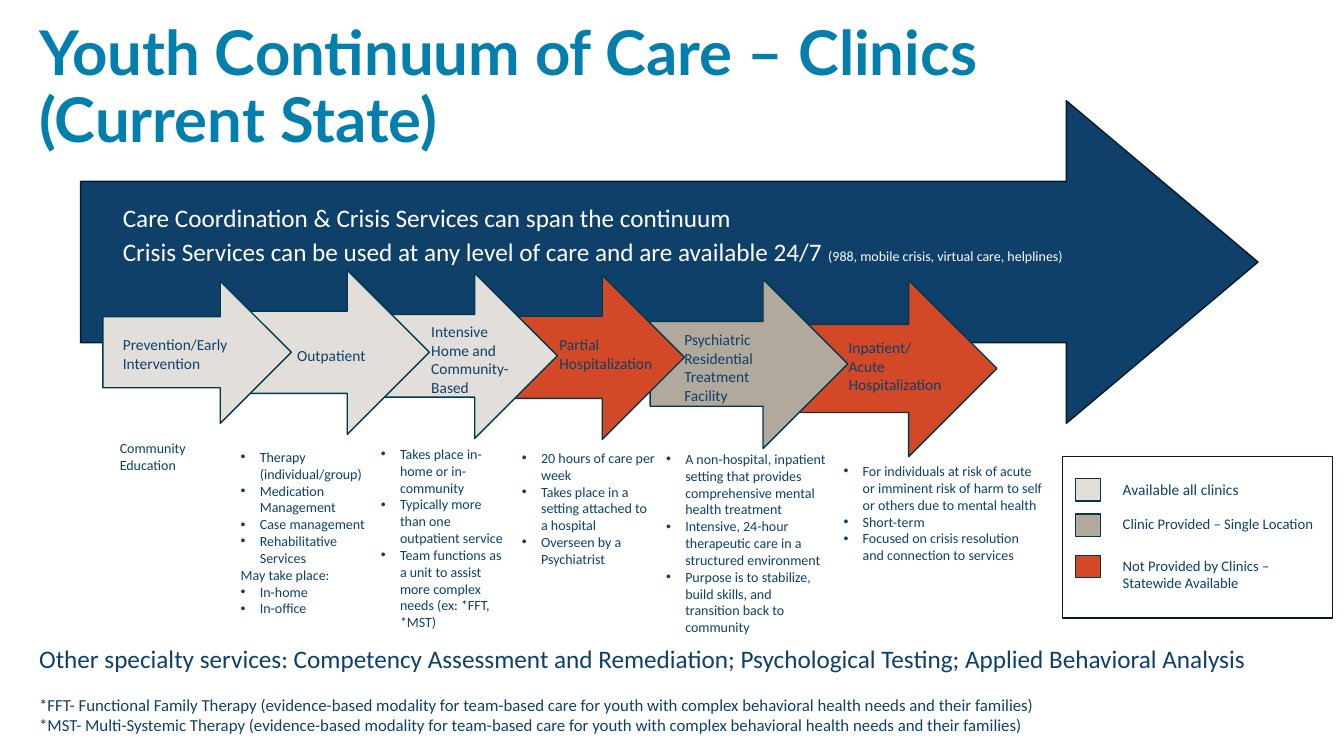
"""Build the Youth Continuum of Care slide."""
from dataclasses import dataclass

from lxml import etree
from pptx import Presentation
from pptx import util as u
from pptx.dml.color import RGBColor
from pptx.enum import shapes, text
from pptx.oxml import ns

COLS, ROWS = 133.33, 75
SLIDE_W, SLIDE_H = u.Inches(13.33), u.Inches(7.5)


@dataclass(frozen=True)
class Theme:
    head_font: str = "Lato"
    body_font: str = "Calibri"
    title: str = "037FAE"
    navy: str = "0E406A"
    white: str = "FFFFFF"
    dark_line: str = "061C2E"
    teal_line: str = "01384C"
    everywhere: str = "E2DFDA"
    single: str = "B1A99C"
    statewide: str = "D34927"
    title_pt: float = 44
    lead_pt: float = 18
    note_pt: float = 12
    label_pt: float = 11
    legend_pt: float = 10.5
    detail_pt: float = 10
    line_pt: float = 1


@dataclass(frozen=True)
class Box:
    col: float
    row: float
    cols: float
    rows: float

    def emu(self) -> tuple[int, int, int, int]:
        x, y = SLIDE_W / COLS, SLIDE_H / ROWS
        return round(self.col * x), round(self.row * y), round(self.cols * x), round(self.rows * y)


@dataclass(frozen=True)
class Run:
    words: str
    size: float
    color: str
    font: str
    bold: bool = False


@dataclass(frozen=True)
class Line:
    runs: tuple[Run, ...]
    bullet: bool = False


@dataclass(frozen=True)
class Stage:
    arrow: Box
    fill: str
    label_box: Box
    label: str
    detail_box: Box
    details: tuple[Line, ...]


@dataclass(frozen=True)
class Key:
    row: float
    fill: str
    label: str
    size: float


T = Theme()


def plain(words: str, size: float, color: str = T.navy) -> Line:
    return Line((Run(words, size, color, T.body_font),))


def detail(words: str) -> Line:
    return plain(words, T.detail_pt)


def points(*items: str) -> tuple[Line, ...]:
    return tuple(Line(detail(item).runs, True) for item in items)


STAGES = (
    Stage(Box(10.2, 27.9, 18.7, 14.1), T.everywhere,
          Box(11.2, 32.8, 14.7, 4.7), "Prevention/Early Intervention",
          Box(10.9, 43.1, 9.7, 4.4), (detail("Community Education"),)),
    Stage(Box(24.8, 26.8, 17.8, 16.3), T.everywhere,
          Box(28.5, 33.8, 10.2, 2.9), "Outpatient",
          Box(22.9, 44, 15.8, 21.2),
          points("Therapy (individual/group)", "Medication Management",
                 "Case management", "Rehabilitative Services")
          + (detail("May take place:"),) + points("In-home", "In-office")),
    Stage(Box(37.5, 27.1, 17.8, 16.4), T.everywhere,
          Box(41.8, 31.5, 10.2, 8.4), "Intensive Home and Community-Based",
          Box(36.8, 43.7, 14.8, 19.5),
          points("Takes place in-home or in-community",
                 "Typically more than one outpatient service",
                 "Team functions as a unit to assist more complex needs (ex: *FFT, *MST)")),
    Stage(Box(50.5, 27.3, 17.4, 16.3), T.statewide,
          Box(54.5, 32.8, 14.4, 4.7), "Partial Hospitalization",
          Box(50.8, 44.1, 15.3, 14.5),
          points("20 hours of care per week",
                 "Takes place in a setting attached to a hospital",
                 "Overseen by a Psychiatrist")),
    Stage(Box(64.5, 27.7, 19.6, 16.8), T.single,
          Box(66.9, 32.3, 12.5, 8.4), "Psychiatric Residential Treatment Facility",
          Box(65.1, 44.2, 18.1, 21.2),
          points("A non-hospital, inpatient setting that provides comprehensive "
                 "mental health treatment",
                 "Intensive, 24-hour therapeutic care in a structured environment",
                 "Purpose is to stabilize, build skills, and transition back to community")),
    Stage(Box(78.4, 27.8, 20.5, 17.5), T.statewide,
          Box(83.2, 33.1, 11.8, 6.6), "Inpatient/ Acute Hospitalization",
          Box(82.7, 45.4, 21.7, 12.8),
          points("For individuals at risk of acute or imminent risk of harm to self "
                 "or others due to mental health",
                 "Short-term",
                 "Focused on crisis resolution and connection to services")),
)

KEYS = (
    Key(47.5, T.everywhere, "Available all clinics", T.label_pt),
    Key(51, T.single, "Clinic Provided – Single Location", T.legend_pt),
    Key(55.1, T.statewide, "Not Provided by Clinics – Statewide Available", T.legend_pt),
)

CRISIS = Line((
    Run("Crisis Services can be used at any level of care and are available 24/7 ",
        T.lead_pt, T.white, T.body_font),
    Run("(988, mobile crisis, virtual care, helplines)", T.detail_pt, T.white, T.body_font),
))
FOOTNOTE = " (evidence-based modality for team-based care for youth with complex " \
           "behavioral health needs and their families)"
BANDS = (
    (Box(11.2, 19.6, 64.7, 4), (plain("Care Coordination & Crisis Services can span the continuum",
                                      T.lead_pt, T.white),)),
    (Box(11.2, 23, 100.7, 4), (CRISIS,)),
    (Box(2.9, 63.3, 123.7, 4), (plain(
        "Other specialty services: Competency Assessment and Remediation; "
        "Psychological Testing; Applied Behavioral Analysis", T.lead_pt),)),
    (Box(2.9, 68.4, 125.4, 5), tuple(
        plain(name + FOOTNOTE, T.note_pt)
        for name in ("*FFT- Functional Family Therapy", "*MST- Multi-Systemic Therapy"))),
)


def add_shape(s, kind: shapes.MSO_SHAPE, box: Box, fill: str | None, line: str):
    sp = s.shapes.add_shape(kind, *box.emu())
    sp.shadow.inherit = False
    if fill:
        sp.fill.solid()
        sp.fill.fore_color.rgb = RGBColor.from_string(fill)
    else:
        sp.fill.background()
    sp.line.color.rgb = RGBColor.from_string(line)
    sp.line.width = u.Pt(T.line_pt)
    return sp


def add_text(s, box: Box, lines: tuple[Line, ...]):
    tf = s.shapes.add_textbox(*box.emu()).text_frame
    tf.word_wrap = True
    for i, line in enumerate(lines):
        p = tf.add_paragraph() if i else tf.paragraphs[0]
        if line.bullet:
            pPr = p._p.get_or_add_pPr()
            indent = u.Inches(0.19)
            pPr.set("marL", str(indent))
            pPr.set("indent", str(-indent))
            etree.SubElement(pPr, ns.qn("a:buFont")).set("typeface", "Arial")
            etree.SubElement(pPr, ns.qn("a:buChar")).set("char", "•")
        for run in line.runs:
            r = p.add_run()
            r.text = run.words
            r.font.name, r.font.size, r.font.bold = run.font, u.Pt(run.size), run.bold
            r.font.color.rgb = RGBColor.from_string(run.color)
    return tf


def add_title(s) -> None:
    title = Run("Youth Continuum of Care – Clinics (Current State)",
                T.title_pt, T.title, T.head_font, True)
    tf = add_text(s, Box(2.9, 1.6, 99.3, 14.5), (Line((title,)),))
    tf.vertical_anchor = text.MSO_ANCHOR.MIDDLE
    tf.paragraphs[0].line_spacing = 0.9


def add_stages(s) -> None:
    span = add_shape(s, shapes.MSO_SHAPE.RIGHT_ARROW, Box(8, 10, 116.8, 32), T.navy, T.dark_line)
    span.adjustments[1] = 0.594
    for stage in reversed(STAGES):
        add_shape(s, shapes.MSO_SHAPE.RIGHT_ARROW, stage.arrow, stage.fill, T.teal_line)
    for stage in STAGES:
        add_text(s, stage.label_box, (plain(stage.label, T.label_pt),))
        add_text(s, stage.detail_box, stage.details)


def add_legend(s) -> None:
    rect = shapes.MSO_SHAPE.RECTANGLE
    add_shape(s, rect, Box(105.4, 45.3, 26.8, 16), None, T.dark_line)
    for key in KEYS:
        add_shape(s, rect, Box(106.7, key.row, 2.5, 2.2), key.fill, T.teal_line)
        add_text(s, Box(110.4, key.row - 0.4, 22.1, 2.9), (plain(key.label, key.size),))


def main() -> None:
    prs = Presentation()
    prs.slide_width, prs.slide_height = SLIDE_W, SLIDE_H
    s = prs.slides.add_slide(prs.slide_layouts[6])
    add_title(s)
    add_stages(s)
    for box, lines in BANDS:
        add_text(s, box, lines)
    add_legend(s)
    prs.save("out.pptx")


if __name__ == "__main__":
    main()
